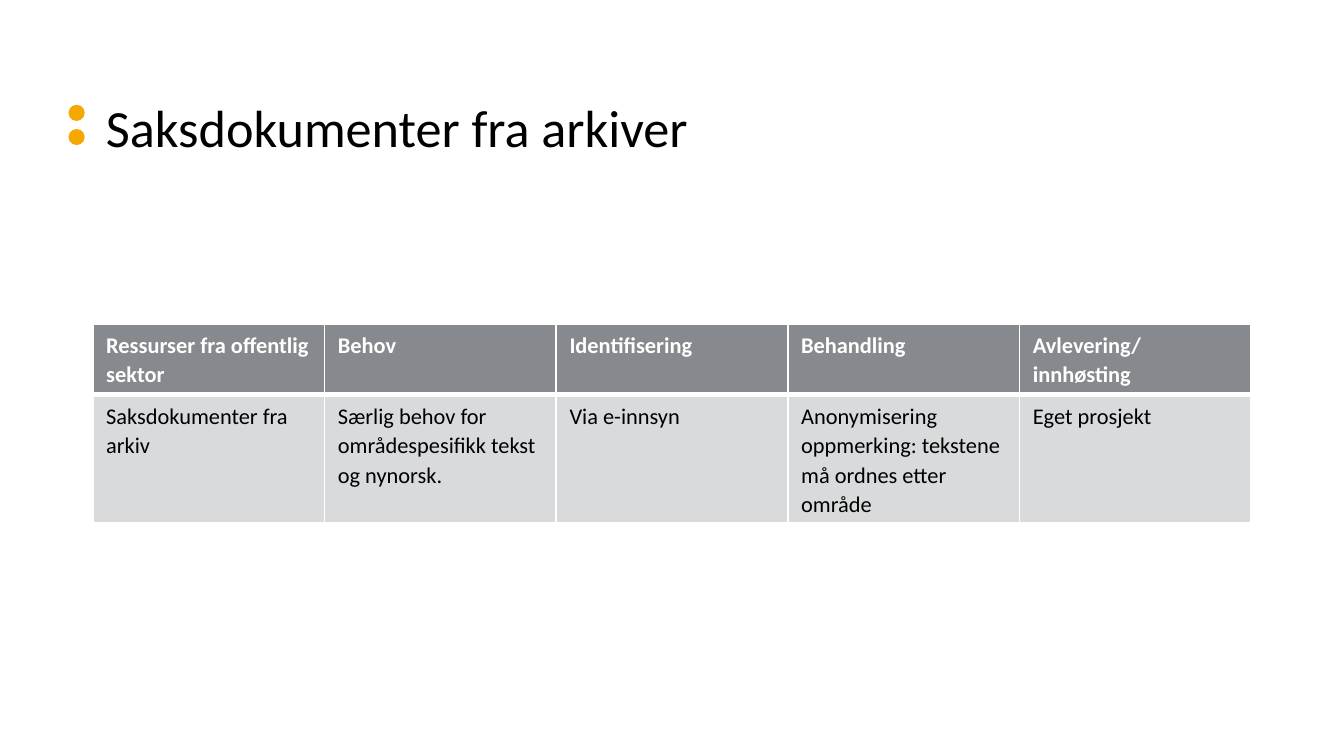
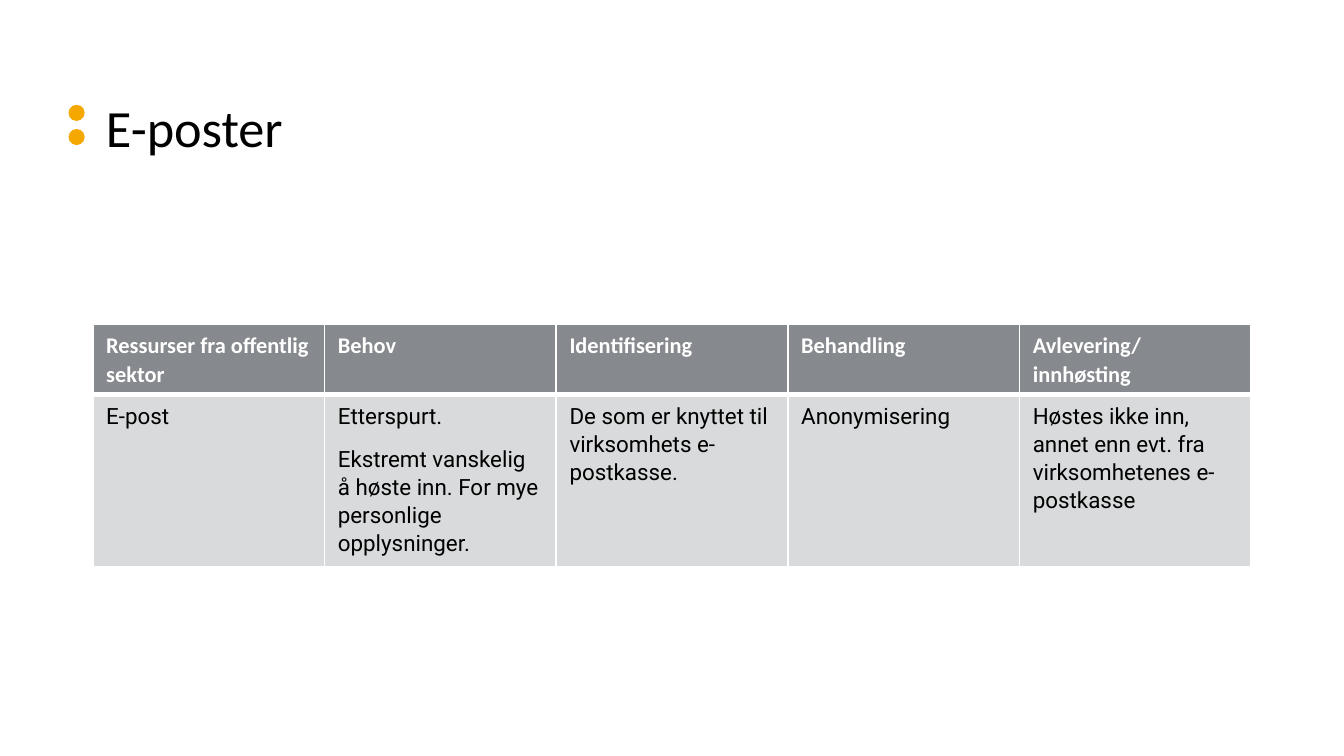
from lxml import etree
from pptx import Presentation
from pptx.dml.color import RGBColor
from pptx.enum.lang import MSO_LANGUAGE_ID
from pptx.enum.shapes import MSO_SHAPE
from pptx.enum.text import MSO_ANCHOR
from pptx.oxml.ns import qn
from pptx.util import Inches, Pt

OVAL = MSO_SHAPE.OVAL
TOP = MSO_ANCHOR.TOP
NORWEGIAN = MSO_LANGUAGE_ID.NORWEGIAN_BOKMOL

COLORS = {
    "accent": "F4A800",
    "header": "86898D",
    "body": "D9DADB",
    "white": "FFFFFF",
    "black": "000000",
}
BLANK_LAYOUT = 6
SLIDE_WIDTH = Inches(10)
SLIDE_HEIGHT = SLIDE_WIDTH * 9 // 16
TITLE_BOX = (0.69, 0.71, 8.62, 0.95)
TABLE_LEFT, TABLE_TOP, TABLE_WIDTH = 0.69, 2.41, 8.62
ROW_HEIGHT = 0.41
HEADERS = [
    "Ressurser fra offentlig sektor",
    "Behov",
    "Identifisering",
    "Behandling",
    "Avlevering/innhøsting",
]
SLIDES = [
    {
        "title": "Saksdokumenter fra arkiver",
        "font": "Calibri",
        "height": 1.46,
        "values": [
            "Saksdokumenter fra arkiv",
            "Særlig behov for områdespesifikk tekst og nynorsk.",
            "Via e-innsyn",
            "Anonymisering oppmerking: tekstene må ordnes etter område",
            "Eget prosjekt",
        ],
    },
    {
        "title": "E-poster",
        "font": "Roboto",
        "height": 1.79,
        "values": [
            "E-post",
            "Etterspurt.\nEkstremt vanskelig å høste inn. For mye personlige opplysninger.",
            "De som er knyttet til virksomhets e-postkasse.",
            "Anonymisering",
            "Høstes ikke inn, annet enn evt. fra virksomhetenes e-postkasse",
        ],
    },
]


def write_text(frame, text, size=12, font="Calibri", color="black", bold=False,
               line_spacing=1.07, space_after=8):
    """Fill a text frame with one formatted paragraph per line of text."""
    frame.word_wrap = True
    frame.vertical_anchor = TOP
    frame.text = text
    for paragraph in frame.paragraphs:
        paragraph.line_spacing = line_spacing
        paragraph.space_after = Pt(space_after)
        for run in paragraph.runs:
            run.font.size = Pt(size)
            run.font.name = font
            run.font.bold = bold
            run.font.color.rgb = RGBColor.from_string(COLORS[color])
            run.font.language_id = NORWEGIAN


def add_title(slide, text, box):
    """Place the slide title with the two accent dots at its left."""
    left, top, width, height = box
    for offset in (0.07, 0.25):
        dot = slide.shapes.add_shape(OVAL, Inches(left - 0.18), Inches(top + offset),
                                     Inches(0.12), Inches(0.12))
        dot.shadow.inherit = False
        dot.fill.solid()
        dot.fill.fore_color.rgb = RGBColor.from_string(COLORS["accent"])
        dot.line.fill.background()
    title = slide.shapes.add_textbox(*map(Inches, (left, top, width, height)))
    write_text(title.text_frame, text, size=28, line_spacing=0.9, space_after=0)


def set_borders(cell, **widths):
    """Draw white cell borders, 1 point wide unless a side is given."""
    properties = cell._tc.get_or_add_tcPr()
    for side in "LRTB":
        line = etree.SubElement(properties, qn(f"a:ln{side}"),
                                w=str(Pt(widths.get(side, 1))))
        fill = etree.SubElement(line, qn("a:solidFill"))
        etree.SubElement(fill, qn("a:srgbClr"), val=COLORS["white"])


def style_cell(cell, text, fill, borders, **text_format):
    """Set the text, borders and fill of one table cell."""
    write_text(cell.text_frame, text, **text_format)
    set_borders(cell, **borders)
    cell.fill.solid()
    cell.fill.fore_color.rgb = RGBColor.from_string(COLORS[fill])


def add_resource_table(slide, values, font, box):
    """Place the table with a header row and one row of values."""
    left, top, width, height = map(Inches, box)
    frame = slide.shapes.add_table(2, len(HEADERS), left, top, width, height)
    table = frame.table
    for row in table.rows:
        row.height = Inches(ROW_HEIGHT)
    frame.height = height
    for column, (header, value) in enumerate(zip(HEADERS, values)):
        style_cell(table.cell(0, column), header, "header", {"B": 3},
                   color="white", bold=True)
        style_cell(table.cell(1, column), value, "body", {"T": 3}, font=font)


def add_resource_slide(presentation, content):
    """Add one slide with a title and a resource table."""
    slide = presentation.slides.add_slide(presentation.slide_layouts[BLANK_LAYOUT])
    add_title(slide, content["title"], TITLE_BOX)
    add_resource_table(slide, content["values"], content["font"],
                       (TABLE_LEFT, TABLE_TOP, TABLE_WIDTH, content["height"]))


def main():
    """Build and save the presentation."""
    presentation = Presentation()
    presentation.slide_width = SLIDE_WIDTH
    presentation.slide_height = SLIDE_HEIGHT
    for content in SLIDES:
        add_resource_slide(presentation, content)
    presentation.save("out.pptx")


if __name__ == "__main__":
    main()
